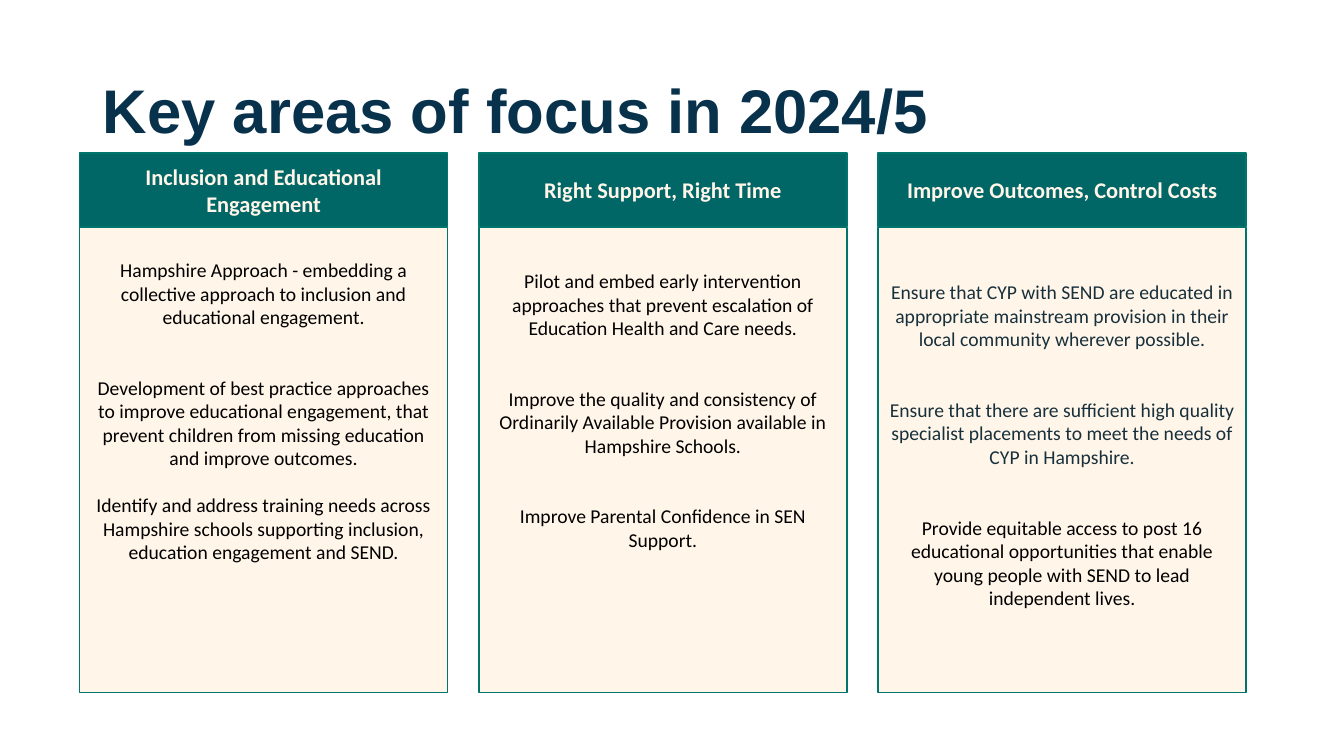
from dataclasses import dataclass

from pptx import Presentation
from pptx.dml.color import RGBColor
from pptx.enum.shapes import MSO_SHAPE
from pptx.enum.text import MSO_ANCHOR, MSO_AUTO_SIZE, PP_ALIGN
from pptx.util import Inches, Pt

RECTANGLE = MSO_SHAPE.RECTANGLE
TOP, MIDDLE = MSO_ANCHOR.TOP, MSO_ANCHOR.MIDDLE
LEFT, CENTER = PP_ALIGN.LEFT, PP_ALIGN.CENTER
NO_FIT = MSO_AUTO_SIZE.NONE
TITLE_ONLY = 5


@dataclass(frozen=True)
class Theme:
    heading_font: str = "Arial"
    body_font: str = "Calibri"
    title_size: int = 44
    header_size: int = 16
    body_size: int = 14
    navy: str = "08314C"
    teal: str = "006666"
    border: str = "00756B"
    cream: str = "FFF5E9"
    black: str = "000000"
    slate: str = "17303B"


@dataclass(frozen=True)
class Grid:
    left: float = 0.79
    pitch: float = 3.96
    width: float = 3.65
    header_top: float = 1.52
    header_height: float = 0.73
    body_top: float = 2.26
    body_height: float = 4.61


THEME = Theme()
GRID = Grid()
LINE = 16.8

COLUMNS = [
    ("Inclusion and Educational Engagement", 0.3, [
        ("Hampshire Approach - embedding a collective approach to inclusion "
         "and educational engagement.", THEME.black, 0),
        ("Development of best practice approaches to improve educational "
         "engagement, that prevent children from missing education and "
         "improve outcomes.", THEME.black, 2 * LINE),
        ("Identify and address training needs across Hampshire schools "
         "supporting inclusion, education engagement and SEND.",
         THEME.black, LINE),
    ]),
    ("Right Support, Right Time", 0.41, [
        ("Pilot and embed early intervention approaches that prevent "
         "escalation of Education Health and Care needs.", THEME.black, 0),
        ("Improve the quality and consistency of Ordinarily Available "
         "Provision available in Hampshire Schools.", THEME.black, 2 * LINE),
        ("Improve Parental Confidence in SEN Support.",
         THEME.black, 2 * LINE),
    ]),
    ("Improve Outcomes, Control Costs", 0.52, [
        ("Ensure that CYP with SEND are educated in appropriate mainstream "
         "provision in their local community wherever possible.",
         THEME.slate, 0),
        ("Ensure that there are sufficient high quality specialist "
         "placements to meet the needs of CYP in Hampshire.",
         THEME.slate, 2 * LINE),
        ("Provide equitable access to post 16 educational opportunities "
         "that enable young people with SEND to lead independent lives.",
         THEME.black, 2 * LINE),
    ]),
]


def set_values(target, values):
    for name, value in values.items():
        setattr(target, name, value)


def write_paragraph(para, text, font, size, color, bold=False, **layout):
    set_values(para, layout)
    span = para.add_run()
    span.text = text
    set_values(span.font, {"name": font, "size": Pt(size), "bold": bold})
    span.font.color.rgb = RGBColor.from_string(color)


def add_title(page, text):
    title = page.shapes.title
    set_values(title, {"left": Inches(0.92), "top": Inches(0.4),
                       "width": Inches(11.5), "height": Inches(1.45)})
    set_values(title.text_frame, {"vertical_anchor": MIDDLE,
                                  "auto_size": NO_FIT, "word_wrap": True})
    write_paragraph(title.text_frame.paragraphs[0], text, THEME.heading_font,
                    THEME.title_size, THEME.navy, True,
                    alignment=LEFT, line_spacing=0.9)


def add_panel(page, column, top, height, fill, anchor, inset=0.05):
    box = page.shapes.add_shape(
        RECTANGLE, Inches(GRID.left + column * GRID.pitch), Inches(top),
        Inches(GRID.width), Inches(height))
    box.shadow.inherit = False
    box.fill.solid()
    box.fill.fore_color.rgb = RGBColor.from_string(fill)
    box.line.color.rgb = RGBColor.from_string(THEME.border)
    box.line.width = Pt(1)
    set_values(box.text_frame, {"word_wrap": True, "vertical_anchor": anchor,
                                "margin_top": Inches(inset)})
    return box.text_frame


def add_header(page, column, text):
    frame = add_panel(page, column, GRID.header_top, GRID.header_height,
                      THEME.teal, MIDDLE)
    write_paragraph(frame.paragraphs[0], text, THEME.body_font,
                    THEME.header_size, THEME.cream, True, alignment=CENTER)


def add_body(page, column, inset, points):
    frame = add_panel(page, column, GRID.body_top, GRID.body_height,
                      THEME.cream, TOP, inset)
    for index, (text, color, gap) in enumerate(points):
        para = frame.add_paragraph() if index else frame.paragraphs[0]
        write_paragraph(para, text, THEME.body_font, THEME.body_size, color,
                        alignment=CENTER, space_before=Pt(gap))


def main():
    deck = Presentation()
    set_values(deck, {"slide_width": Inches(13.33),
                      "slide_height": Inches(7.5)})
    page = deck.slides.add_slide(deck.slide_layouts[TITLE_ONLY])
    add_title(page, "Key areas of focus in 2024/5")
    for column, (header, inset, points) in enumerate(COLUMNS):
        add_body(page, column, inset, points)
        add_header(page, column, header)
    deck.save("out.pptx")


if __name__ == "__main__":
    main()
